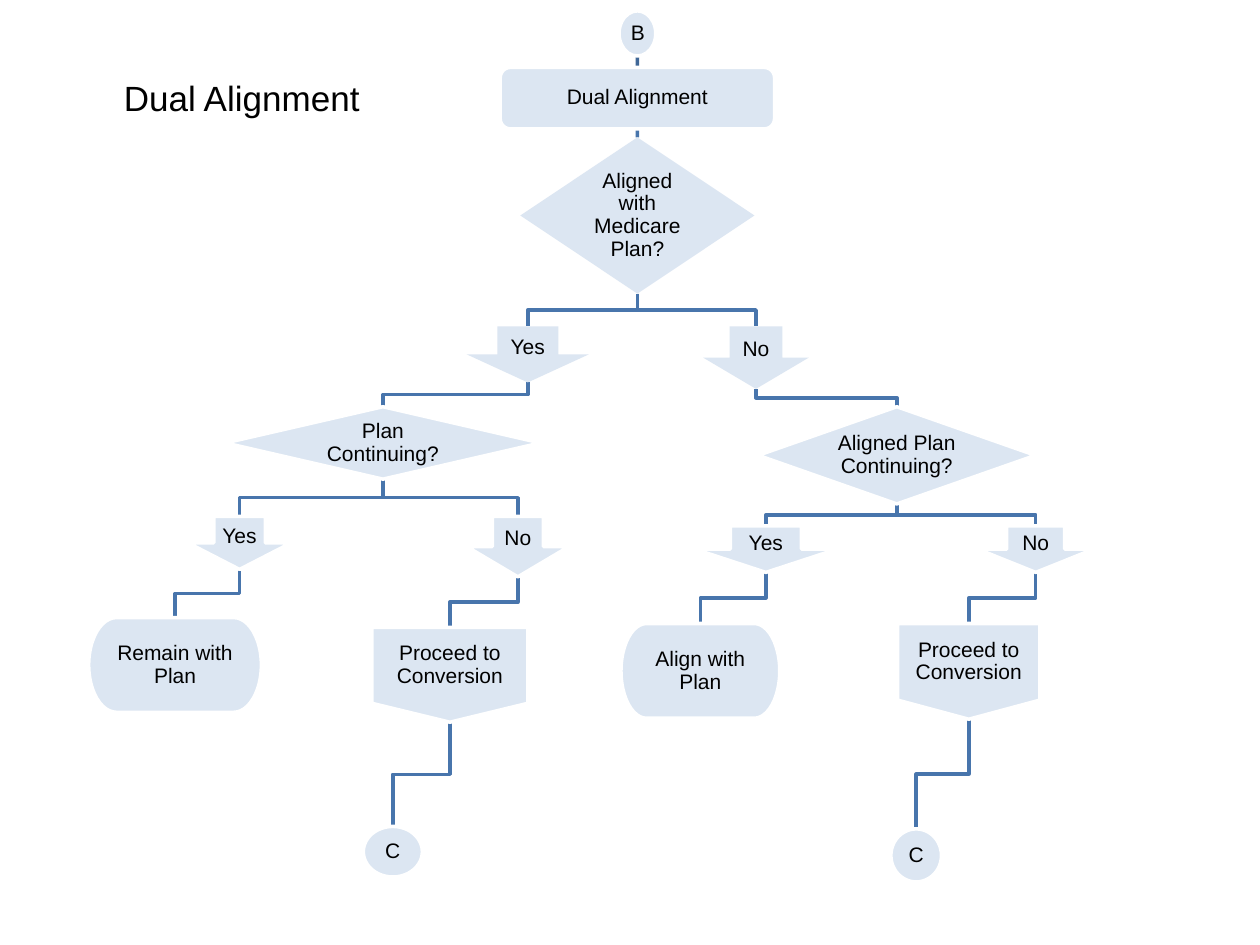
from lxml import etree
from pptx import Presentation
from pptx.dml.color import RGBColor
from pptx.enum.shapes import MSO_CONNECTOR, MSO_SHAPE
from pptx.enum.text import MSO_ANCHOR, PP_ALIGN
from pptx.oxml.ns import qn
from pptx.util import Cm, Pt

STRAIGHT = MSO_CONNECTOR.STRAIGHT
CENTER, MIDDLE = PP_ALIGN.CENTER, MSO_ANCHOR.MIDDLE
DOT = MSO_SHAPE.FLOWCHART_CONNECTOR
STEP = MSO_SHAPE.FLOWCHART_ALTERNATE_PROCESS
ASK = MSO_SHAPE.FLOWCHART_DECISION
ARROW = MSO_SHAPE.DOWN_ARROW
END = MSO_SHAPE.FLOWCHART_TERMINATOR
PAGE = MSO_SHAPE.FLOWCHART_OFFPAGE_CONNECTOR

FILL, EDGE, LINK, DARK, INK = "DCE6F2", "FFFFFF", "4875AC", "3F6797", "000000"
TITLE = ("Dual Alignment", 0.43, 0.76, 8.89, 2.41)

# key: parent, kind, text, centre x, top, width, height
NODES = {
    "start": (None, DOT, "B", 12.85, 0.22, 0.74, 0.91),
    "dual": ("start", STEP, "Dual Alignment", 12.85, 1.36, 5.53, 1.24),
    "aligned": ("dual", ASK, "Aligned with Medicare Plan?", 12.85, 2.77, 4.72, 3.15),
    "no": ("aligned", ARROW, "No", 15.24, 6.58, 2.13, 1.26),
    "no plan": ("no", ASK, "Aligned Plan Continuing?", 18.08, 8.2, 5.59, 1.96),
    "no yes": ("no plan", ARROW, "Yes", 15.44, 10.6, 2.87, 0.94),
    "align": ("no yes", END, "Align with Plan", 14.12, 12.57, 3.2, 1.91),
    "no no": ("no plan", ARROW, "No", 20.88, 10.6, 2.34, 0.94),
    "no go": ("no no", PAGE, "Proceed to Conversion", 19.53, 12.57, 2.87, 1.93),
    "no end": ("no go", DOT, "C", 18.47, 16.71, 1.02, 1.07),
    "yes": ("aligned", ARROW, "Yes", 10.64, 6.58, 2.46, 1.13),
    "yes plan": ("yes", ASK, "Plan Continuing?", 7.72, 8.2, 6.35, 1.46),
    "yes yes": ("yes plan", ARROW, "Yes", 4.83, 10.41, 2.08, 1.07),
    "remain": ("yes yes", END, "Remain with Plan", 3.53, 12.45, 3.48, 1.91),
    "yes no": ("yes plan", ARROW, "No", 10.44, 10.41, 2.06, 1.22),
    "yes go": ("yes no", PAGE, "Proceed to Conversion", 9.07, 12.65, 3.15, 1.91),
    "yes end": ("yes go", DOT, "C", 7.92, 16.66, 1.19, 1.02),
}
BARE = ("aligned", "yes", "no")


def tint(fmt, code):
    fmt.solid()
    fmt.fore_color.rgb = RGBColor.from_string(code)


def apply(item, vals):
    for name, val in vals.items():
        setattr(item, name, val)


def write(shape, text, size, inset, para):
    frame = shape.text_frame
    frame.text = text
    apply(frame, {"word_wrap": True, "vertical_anchor": MIDDLE})
    apply(frame, {f"margin_{side}": Cm(inset) for side in ("left", "top", "right", "bottom")})
    line = frame.paragraphs[0]
    apply(line, {"alignment": CENTER, **para})
    font = line.runs[0].font
    apply(font, {"name": "Arial", "size": Pt(size), "bold": False})
    tint(font.fill, INK)


def stroke(shape, code):
    tint(shape.line.fill, code)
    shape.line.width = Pt(2)


def add_node(shapes, key, kind, text, mid, top, wide, high):
    node = shapes.add_shape(kind, Cm(mid - wide / 2), Cm(top), Cm(wide), Cm(high))
    node.shadow.inherit = False
    tint(node.fill, FILL)
    if key in BARE:
        node.line.fill.background()
    else:
        stroke(node, EDGE)
    write(node, text, 12, 0.13, {"line_spacing": 0.9})
    return node


def add_link(shapes, above, below, code):
    x1, x2 = (node.left + node.width // 2 for node in (above, below))
    y1, y2 = above.top + above.height, below.top
    if abs(x1 - x2) < Cm(0.02):
        link = shapes.add_connector(STRAIGHT, x1, y1, x2, y2)
        if above.auto_shape_type != DOT:
            link.begin_connect(above, 2)
        link.end_connect(below, 0)
        etree.SubElement(link._element.spPr, qn("a:effectLst"))
    else:
        half = (y1 + y2) // 2
        path = shapes.build_freeform(x1, y1)
        path.add_line_segments([(x1, half), (x2, half), (x2, y2)], close=False)
        link = path.convert_to_shape()
        link.fill.background()
        link.shadow.inherit = False
    stroke(link, code)
    shapes._spTree.insert(2, link._element)


def main():
    deck = Presentation()
    apply(deck, {"slide_width": Cm(25.4), "slide_height": Cm(19.05)})
    shapes = deck.slides.add_slide(deck.slide_layouts[5]).shapes

    text, *box = TITLE
    apply(shapes.title, dict(zip(("left", "top", "width", "height"), map(Cm, box))))
    write(shapes.title, text, 20, 0.2, {})

    made = {key: add_node(shapes, key, *data) for key, (_, *data) in NODES.items()}
    for key, (above, *_) in NODES.items():
        if above:
            add_link(shapes, made[above], made[key], DARK if above == "start" else LINK)
    deck.save("out.pptx")


if __name__ == "__main__":
    main()
